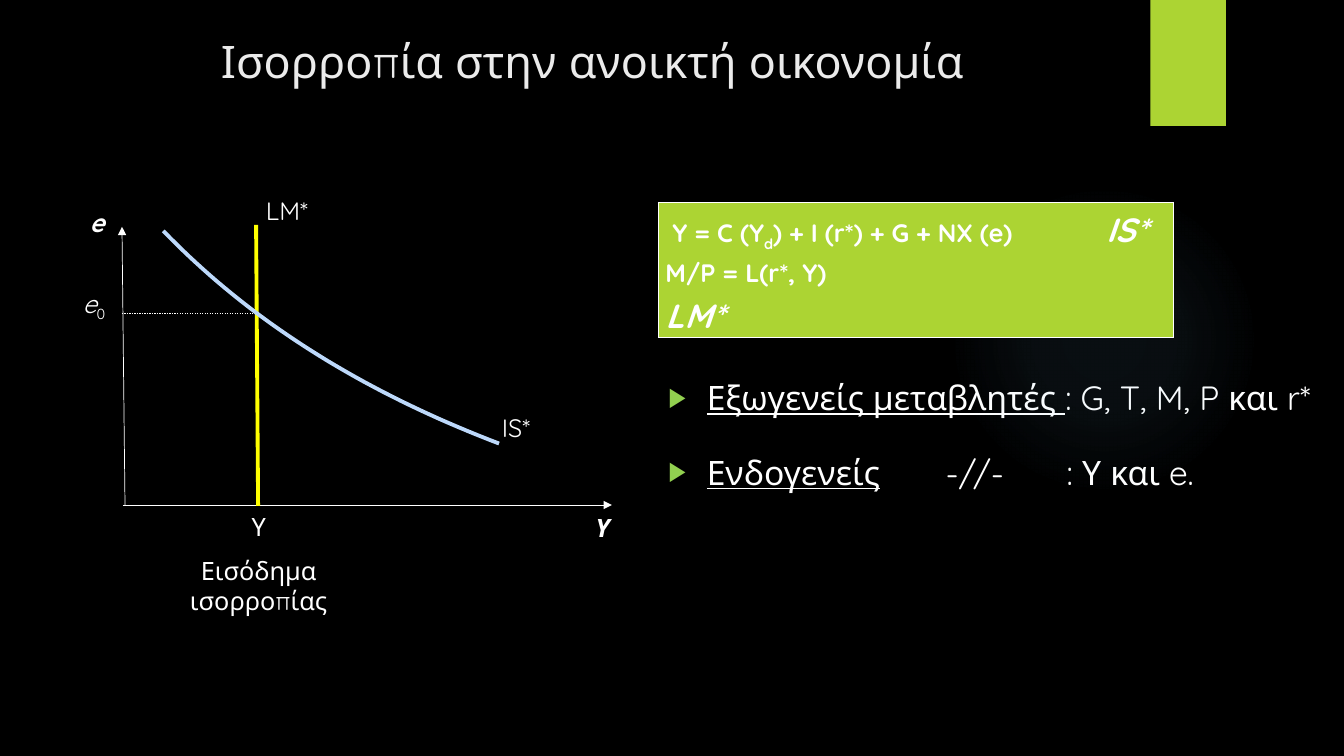
import dataclasses
import pptx
import pptx.util
import pptx.oxml
import pptx.oxml.ns
import pptx.dml.color
import pptx.enum.dml
import pptx.enum.shapes
import pptx.enum.text

Inches = pptx.util.Inches
Pt = pptx.util.Pt
ALIGN = pptx.enum.text.PP_ALIGN
ANCHOR = pptx.enum.text.MSO_ANCHOR


@dataclasses.dataclass(frozen=True)
class Theme:
    font: str = "Quicksand"
    background: str = "000000"
    text: str = "FFFFFF"
    title: str = "EBEBEB"
    accent: str = "ACD433"
    bullet: str = "92D050"
    glow: str = "7AC4F0"
    lm_line: str = "FFFF00"
    is_curve: str = "BDD9FB"
    title_size: int = 32
    large: int = 24
    label: int = 18


T = Theme()


def rgb(value):
    return pptx.dml.color.RGBColor.from_string(value)


def apply(obj, values):
    for name, value in values.items():
        setattr(obj, name, value)


def place(shape, left, top, width, height):
    apply(shape, {"left": Inches(left), "top": Inches(top),
                  "width": Inches(width), "height": Inches(height)})


def add_xml(parent, body):
    tag, rest = body.split(" ", 1) if " " in body.split(">")[0] else (body[:-2], "/>")
    ns = pptx.oxml.ns.nsdecls("a")
    parent.append(pptx.oxml.parse_xml(f"{tag} {ns} {rest}"))


def add_runs(p, runs, size, color=T.text):
    for text, values in runs:
        values = dict(values)
        baseline = values.pop("baseline", None)
        r = p.add_run()
        r.text = text
        apply(r.font, {"name": T.font, "size": Pt(size), **values})
        r.font.color.rgb = rgb(color)
        if baseline:
            r._r.get_or_add_rPr().set("baseline", str(baseline))


def add_tabs(p, stops):
    tabs = "".join(f'<a:tab pos="{Inches(x)}" algn="l"/>' for x in stops)
    add_xml(p._p.get_or_add_pPr(), f'<a:tabLst >{tabs}</a:tabLst>')


def add_paragraphs(tf, paragraphs, size, align=ALIGN.LEFT):
    for i, runs in enumerate(paragraphs):
        p = tf.paragraphs[0] if i == 0 else tf.add_paragraph()
        apply(p, {"alignment": align, "space_before": Pt(10 if i else 0)})
        add_runs(p, runs, size)


def add_label(shapes, box, paragraphs, align=ALIGN.LEFT):
    tb = shapes.add_textbox(*map(Inches, box))
    tb.text_frame.word_wrap = True
    add_paragraphs(tb.text_frame, paragraphs, T.label, align)


def add_line(shapes, start, end, color, width, dash=None, arrow=False):
    line = shapes.add_connector(pptx.enum.shapes.MSO_CONNECTOR.STRAIGHT,
                                *map(Inches, start + end))
    line.line.color.rgb = rgb(color)
    apply(line.line, {"width": Pt(width), "dash_style": dash})
    if arrow:
        add_xml(line.line._get_or_add_ln(), '<a:tailEnd type="triangle"/>')
    add_xml(line._element.spPr, "<a:effectLst/>")


def add_curve(shapes, start, control, end, color, width, steps=40):
    points = []
    for i in range(steps + 1):
        t = i / steps
        points.append(tuple(Inches((1 - t) ** 2 * a + 2 * t * (1 - t) * b + t * t * c)
                            for a, b, c in zip(start, control, end)))
    fb = shapes.build_freeform(*points[0])
    fb.add_line_segments(points[1:], close=False)
    curve = fb.convert_to_shape()
    curve.shadow.inherit = False
    curve.fill.background()
    curve.line.color.rgb = rgb(color)
    curve.line.width = Pt(width)


def add_shape(s, kind, box):
    shape = s.shapes.add_shape(kind, *map(Inches, box))
    shape.shadow.inherit = False
    shape.line.fill.background()
    return shape


def add_backdrop(s):
    s.background.fill.solid()
    s.background.fill.fore_color.rgb = rgb(T.background)
    kinds = pptx.enum.shapes.MSO_SHAPE
    glow = add_shape(s, kinds.OVAL, (9.41, 1.83, 3.08, 3.08))
    stops = "".join(
        f'<a:gs pos="{pos}000"><a:srgbClr val="{T.glow}"><a:alpha val="{alpha}000"/></a:srgbClr></a:gs>'
        for pos, alpha in ((0, 7), (36, 6), (69, 0), (100, 0)))
    gradient = (f'<a:gradFill {pptx.oxml.ns.nsdecls("a")}><a:gsLst>{stops}</a:gsLst>'
                '<a:path path="circle"><a:fillToRect l="50000" t="50000" r="50000" b="50000"/>'
                '</a:path></a:gradFill>')
    glow._element.spPr.prstGeom.addnext(pptx.oxml.parse_xml(gradient))
    tab = add_shape(s, kinds.RECTANGLE, (11.41, 0, 0.75, 1.25))
    tab.fill.solid()
    tab.fill.fore_color.rgb = rgb(T.accent)


def add_title(s, text):
    title = s.shapes.title
    place(title, 2.09, 0.29, 10.29, 0.63)
    apply(title.text_frame, {"vertical_anchor": ANCHOR.MIDDLE, "word_wrap": True,
                             "auto_size": pptx.enum.text.MSO_AUTO_SIZE.NONE})
    p = title.text_frame.paragraphs[0]
    p.alignment = ALIGN.LEFT
    add_runs(p, [(text, {})], T.title_size, T.title)


def add_diagram(s):
    g = s.shapes.add_group_shape().shapes
    add_line(g, (1.22, 5.01), (6.07, 5.01), T.text, 0.5, arrow=True)
    add_line(g, (1.24, 5.01), (1.21, 2.25), T.text, 0.5, arrow=True)
    add_line(g, (2.56, 5.02), (2.54, 2.23), T.lm_line, 2.75)
    add_line(g, (1.21, 3.11), (2.55, 3.11), T.text, 0.25,
             dash=pptx.enum.dml.MSO_LINE.DASH)
    add_curve(g, (1.62, 2.29), (2.9, 3.62), (4.95, 4.4), T.is_curve, 2.75)
    axis = {"bold": True, "italic": True}
    labels = [
        ((5.81, 5.03, 0.61, 0.48), [("Υ", axis)]),
        ((0.79, 2.01, 0.61, 0.48), [("e", axis)]),
        ((4.88, 4.04, 0.61, 0.48), [("IS*", {})]),
        ((2.54, 1.89, 0.74, 0.48), [("LM*", {})]),
        ((0.72, 2.81, 0.61, 0.48), [("e", {"italic": True}), ("0", {"baseline": -25000})]),
    ]
    for box, runs in labels:
        add_label(g, box, [runs])
    add_label(g, (1.39, 5.02, 2.35, 0.48),
              [[("Υ", {})], [("Εισόδημα ισορροπίας", {})]], ALIGN.CENTER)


def add_equations(s):
    table = s.shapes.add_table(1, 1, *map(Inches, (6.53, 2.01, 5.11, 1.34))).table
    apply(table, {"first_row": False, "horz_banding": False})
    cell = table.cell(0, 0)
    apply(cell, {"margin_left": Inches(0.07), "margin_right": Inches(0.07),
                 "margin_top": 0, "margin_bottom": 0})
    tcPr = cell._tc.get_or_add_tcPr()
    for side in "LRTB":
        add_xml(tcPr, f'<a:ln{side} w="{Pt(1)}"><a:solidFill><a:srgbClr val="{T.text}"/>'
                      f'</a:solidFill></a:ln{side}>')
    cell.fill.solid()
    cell.fill.fore_color.rgb = rgb(T.accent)
    bold = {"bold": True}
    name = {"bold": True, "italic": True, "size": Pt(T.large)}
    add_paragraphs(cell.text_frame, [
        [("Y = C (Y", bold), ("d", {"bold": True, "baseline": -25000}),
         (") + I (r*) + G + NX (e)\t", bold), ("IS*", name)],
        [("M/P = L(r*, Y)", bold)],
        [("LM*", name)],
    ], T.label, ALIGN.JUSTIFY)
    for p in cell.text_frame.paragraphs:
        apply(p, {"line_spacing": 1.15, "space_before": Pt(0)})
    first = cell.text_frame.paragraphs[0]
    first._p.get_or_add_pPr().set("marL", str(Inches(0.07)))
    add_tabs(first, [4.3])


def add_variables(s):
    body = s.placeholders[1]
    place(body, 6.53, 3.49, 6.73, 1.59)
    tf = body.text_frame
    apply(tf, {"word_wrap": True, "vertical_anchor": ANCHOR.TOP,
               "auto_size": pptx.enum.text.MSO_AUTO_SIZE.NONE})
    underlined = {"underline": True}
    add_paragraphs(tf, [
        [("Εξωγενείς μεταβλητές ", underlined), (": G, T, M, P και r*", {})],
        [("Ενδογενείς", underlined), ("\t-//-\t: Υ και e.", {})],
    ], T.large, ALIGN.JUSTIFY)
    for p in tf.paragraphs:
        p.line_spacing = 1.5
        pPr = p._p.get_or_add_pPr()
        pPr.set("marL", str(Inches(0.38)))
        pPr.set("indent", str(Inches(-0.38)))
        add_xml(pPr, f'<a:buClr ><a:srgbClr val="{T.bullet}"/></a:buClr>')
        add_xml(pPr, '<a:buSzPct val="80000"/>')
        add_xml(pPr, '<a:buChar char="▶"/>')
    add_tabs(tf.paragraphs[1], [2.75, 3.95])


def main():
    prs = pptx.Presentation()
    apply(prs, {"slide_width": Inches(13.33), "slide_height": Inches(7.5)})
    s = prs.slides.add_slide(prs.slide_layouts[1])
    add_backdrop(s)
    add_title(s, "Ισορροπία στην ανοικτή οικονομία")
    add_diagram(s)
    add_equations(s)
    add_variables(s)
    prs.save("out.pptx")


if __name__ == "__main__":
    main()
